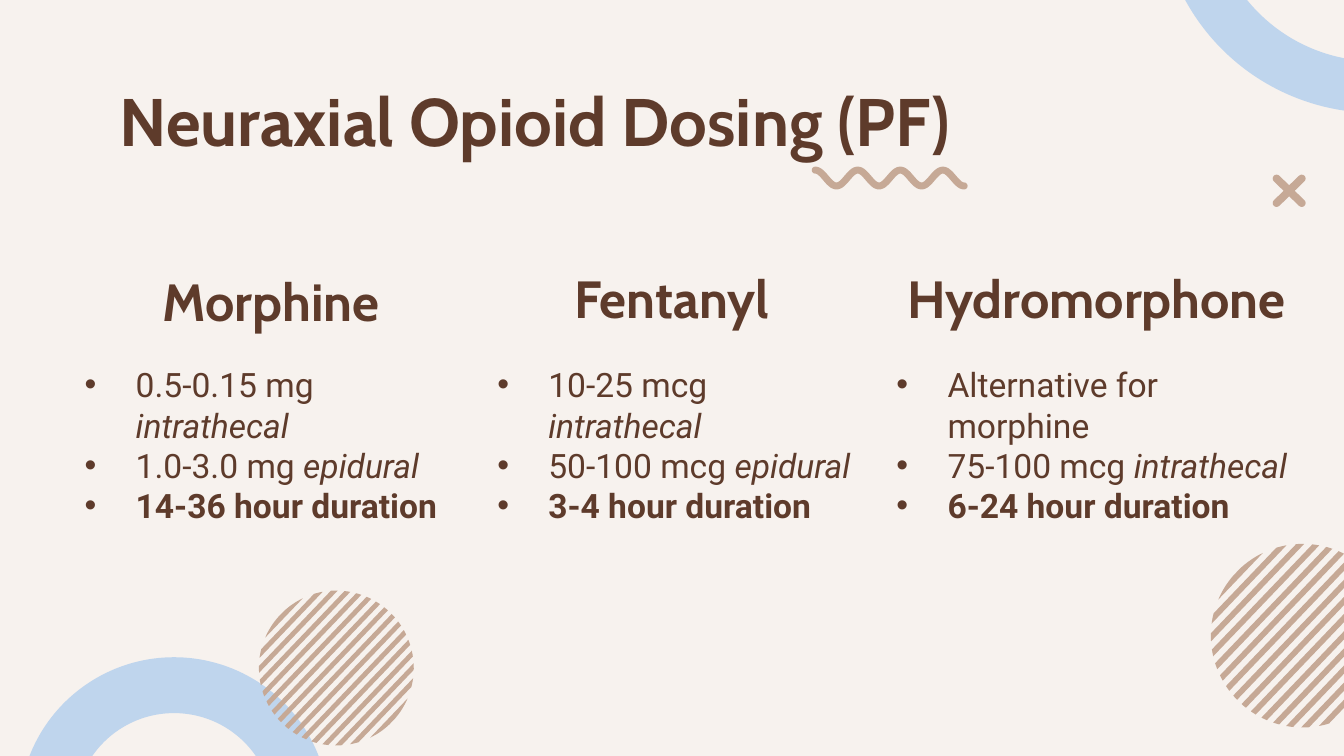
import copy
import math

import lxml.etree
import pptx
import pptx.dml.color
import pptx.enum.shapes
import pptx.enum.text
import pptx.oxml.ns
import pptx.util

CREAM = pptx.dml.color.RGBColor(0xF7, 0xF2, 0xEE)
BROWN = pptx.dml.color.RGBColor(0x5E, 0x3B, 0x2B)
TAN = pptx.dml.color.RGBColor(0xC6, 0xA9, 0x96)
BLUE = pptx.dml.color.RGBColor(0xBF, 0xD5, 0xED)
HEADING_FONT, BODY_FONT = "Cabin", "Roboto"

# The slide is a grid of 100 columns by 56.25 rows of square cells
CELL = pptx.util.Inches(0.1)
COLUMNS, ROWS = 100, 56.25
HEADING_HEIGHT, HEADING_SHIFT, LIST_HEIGHT = 5.8, -0.37, 16.4

PLAIN, ITALIC, BOLD = {}, {"italic": True}, {"bold": True}

# Heading, heading width, column box, list items as runs
DRUGS = [
    ("Morphine", 23.8, (5.3, 19.9, 30.5, 22.6), [
        [("0.5-0.15 mg ", PLAIN), ("intrathecal", ITALIC)],
        [("1.0-3.0 mg ", PLAIN), ("epidural", ITALIC)],
        [("14-36 hour duration", BOLD)],
    ]),
    ("Fentanyl", 23.8, (36, 19.7, 28.7, 22.8), [
        [("10-25 mcg ", PLAIN), ("intrathecal", ITALIC)],
        [("50-100 mcg ", PLAIN), ("epidural", ITALIC)],
        [("3-4 hour duration", BOLD)],
    ]),
    ("Hydromorphone", 31.1, (65.7, 19.7, 32.5, 22.8), [
        [("Alternative for morphine", PLAIN)],
        [("75-100 mcg ", PLAIN), ("intrathecal", ITALIC)],
        [("6-24 hour duration", BOLD)],
    ]),
]


def cells(*lengths):
    return [round(length * CELL) for length in lengths]


def paint(shape, color):
    shape.shadow.inherit = False
    shape.fill.solid()
    shape.fill.fore_color.rgb = color
    shape.line.fill.background()


def add_outline(shapes, points, color):
    corners = [cells(x, y) for x, y in points]
    builder = shapes.build_freeform(*corners[0])
    builder.add_line_segments(corners[1:], close=True)
    paint(builder.convert_to_shape(), color)


def arc(x, y, radius, start, end, steps=8):
    angles = [start + (end - start) * i / steps for i in range(steps + 1)]
    return [(x + radius * math.cos(a), y + radius * math.sin(a)) for a in angles]


# Text
def set_frame(placeholder, box, anchor):
    placeholder.left, placeholder.top, placeholder.width, placeholder.height = cells(*box)
    frame = placeholder.text_frame
    frame.word_wrap = True
    frame.auto_size = pptx.enum.text.MSO_AUTO_SIZE.NONE
    frame.vertical_anchor = anchor
    frame.margin_left = frame.margin_right = CELL
    frame.margin_top = frame.margin_bottom = CELL
    return frame


def add_run(paragraph, text, font, size, bold=False, italic=False):
    run = paragraph.add_run()
    run.text = text
    run.font.name, run.font.size = font, pptx.util.Pt(size)
    run.font.bold, run.font.italic = bold, italic
    run.font.color.rgb = BROWN


def write_heading(placeholder, box, text, size, alignment, anchor):
    paragraph = set_frame(placeholder, box, anchor).paragraphs[0]
    paragraph.alignment = alignment
    paragraph.space_before = pptx.util.Pt(0)
    add_run(paragraph, text, HEADING_FONT, size, bold=True)


def add_bullet(paragraph):
    properties = paragraph._p.get_or_add_pPr()
    indent = pptx.util.Inches(0.38)
    properties.set("marL", str(indent))
    properties.set("indent", str(-indent))
    qn = pptx.oxml.ns.qn
    color = lxml.etree.SubElement(properties, qn("a:buClr"))
    lxml.etree.SubElement(color, qn("a:srgbClr"), val=str(BROWN))
    lxml.etree.SubElement(properties, qn("a:buFont"), typeface="Arial")
    lxml.etree.SubElement(properties, qn("a:buChar"), char="•")


def fill_drug_column(heading, doses, box, name, heading_width, items):
    left, top, width, height = box
    heading_left = left + (width - heading_width) / 2 + HEADING_SHIFT
    write_heading(heading, (heading_left, top, heading_width, HEADING_HEIGHT), name, 28,
                  pptx.enum.text.PP_ALIGN.CENTER, pptx.enum.text.MSO_ANCHOR.BOTTOM)
    frame = set_frame(doses, (left, top + height - LIST_HEIGHT, width, LIST_HEIGHT),
                      pptx.enum.text.MSO_ANCHOR.TOP)
    for number, runs in enumerate(items):
        paragraph = frame.add_paragraph() if number else frame.paragraphs[0]
        paragraph.alignment = pptx.enum.text.PP_ALIGN.LEFT
        paragraph.space_before = pptx.util.Pt(0)
        add_bullet(paragraph)
        for text, style in runs:
            add_run(paragraph, text, BODY_FONT, 18, **style)


# Decoration
def add_ring(slide, box, thickness):
    ring = slide.shapes.add_shape(pptx.enum.shapes.MSO_SHAPE.DONUT, *cells(*box))
    ring.adjustments[0] = thickness
    paint(ring, BLUE)


def add_striped_disc(slide, box, stripes):
    left, top, size, _ = box
    radius = size / 2
    x, y = left + radius, top + radius
    tilt = math.radians(46.3)
    gap, half_width = 0.129 * radius, 0.031 * radius
    group = slide.shapes.add_group_shape()
    for number in range(stripes):
        offset = (number - 7.5) * gap
        near, far = [math.asin((offset + side) / radius) for side in (-half_width, half_width)]
        upper = arc(x, y, radius, near - tilt, far - tilt)
        lower = arc(x, y, radius, math.pi - far - tilt, math.pi - near - tilt)
        add_outline(group.shapes, upper + lower, TAN)


def add_wave(slide, box):
    left, top, width, height = box
    half = 0.26
    amplitude, length = height / 2 - half, width - 2 * half
    frequency = 7 * math.pi / length
    upper, lower = [], []
    for step in range(113):
        run = length * step / 112
        x, y = left + half + run, top + height / 2 - amplitude * math.cos(frequency * run)
        slope = math.atan(amplitude * frequency * math.sin(frequency * run))
        dx, dy = half * math.sin(slope), half * math.cos(slope)
        upper.append((x + dx, y - dy))
        lower.append((x - dx, y + dy))
    middle = top + height / 2
    end_cap = arc(left + width - half, middle + amplitude, half, -math.pi / 2, math.pi / 2)
    start_cap = arc(left + half, middle - amplitude, half, math.pi / 2, 3 * math.pi / 2)
    add_outline(slide.shapes, upper + end_cap + lower[::-1] + start_cap, TAN)


def add_cross(slide, box):
    left, top, width, height = box
    x, y, half = left + width / 2, top + height / 2, 0.29
    reach_x, reach_y = width / 2 - half, height / 2 - half
    points = []
    for arm in range(4):
        angle = math.pi / 4 + arm * math.pi / 2
        tip_x = x + math.copysign(reach_x, math.cos(angle))
        tip_y = y + math.copysign(reach_y, math.sin(angle))
        points += arc(tip_x, tip_y, half, angle - math.pi / 2, angle + math.pi / 2)
        notch = angle + math.pi / 4
        points.append((x + half * math.sqrt(2) * math.cos(notch),
                       y + half * math.sqrt(2) * math.sin(notch)))
    add_outline(slide.shapes, points, TAN)


def add_third_column(layout):
    """Extend the two-column comparison layout with one more heading and list."""
    for index, source in enumerate(list(layout.placeholders)[3:5], start=20):
        extra = copy.deepcopy(source._element)
        extra.nvSpPr.cNvPr.set("id", str(index))
        extra.nvSpPr.nvPr.ph.set("idx", str(index))
        layout.shapes._spTree.append(extra)


def build_dosing_slide(deck):
    layout = deck.slide_layouts.get_by_name("Comparison")
    add_third_column(layout)
    slide = deck.slides.add_slide(layout)
    slide.background.fill.solid()
    slide.background.fill.fore_color.rgb = CREAM

    write_heading(slide.shapes.title, (7.9, 4.9, 84.3, 6.3), "Neuraxial Opioid Dosing (PF)", 36,
                  pptx.enum.text.PP_ALIGN.LEFT, pptx.enum.text.MSO_ANCHOR.TOP)
    bodies = list(slide.placeholders)[1:]
    for heading, doses, drug in zip(bodies[::2], bodies[1::2], DRUGS):
        name, heading_width, box, items = drug
        fill_drug_column(heading, doses, box, name, heading_width, items)

    add_ring(slide, (86.2, -23.9, 32.3, 32.3), 0.119)
    add_ring(slide, (1.4, 48.9, 23.1, 23.1), 0.18)
    add_striped_disc(slide, (19.27, 43.95, 11.52, 11.52), 16)
    add_striped_disc(slide, (90.1, 40.47, 13.66, 13.66), 15)
    add_wave(slide, (60.4, 12.4, 11.6, 1.7))
    add_cross(slide, (94.7, 13, 2.45, 2.4))


def main():
    deck = pptx.Presentation()
    deck.slide_width, deck.slide_height = cells(COLUMNS, ROWS)
    build_dosing_slide(deck)
    deck.save("out.pptx")


if __name__ == "__main__":
    main()
